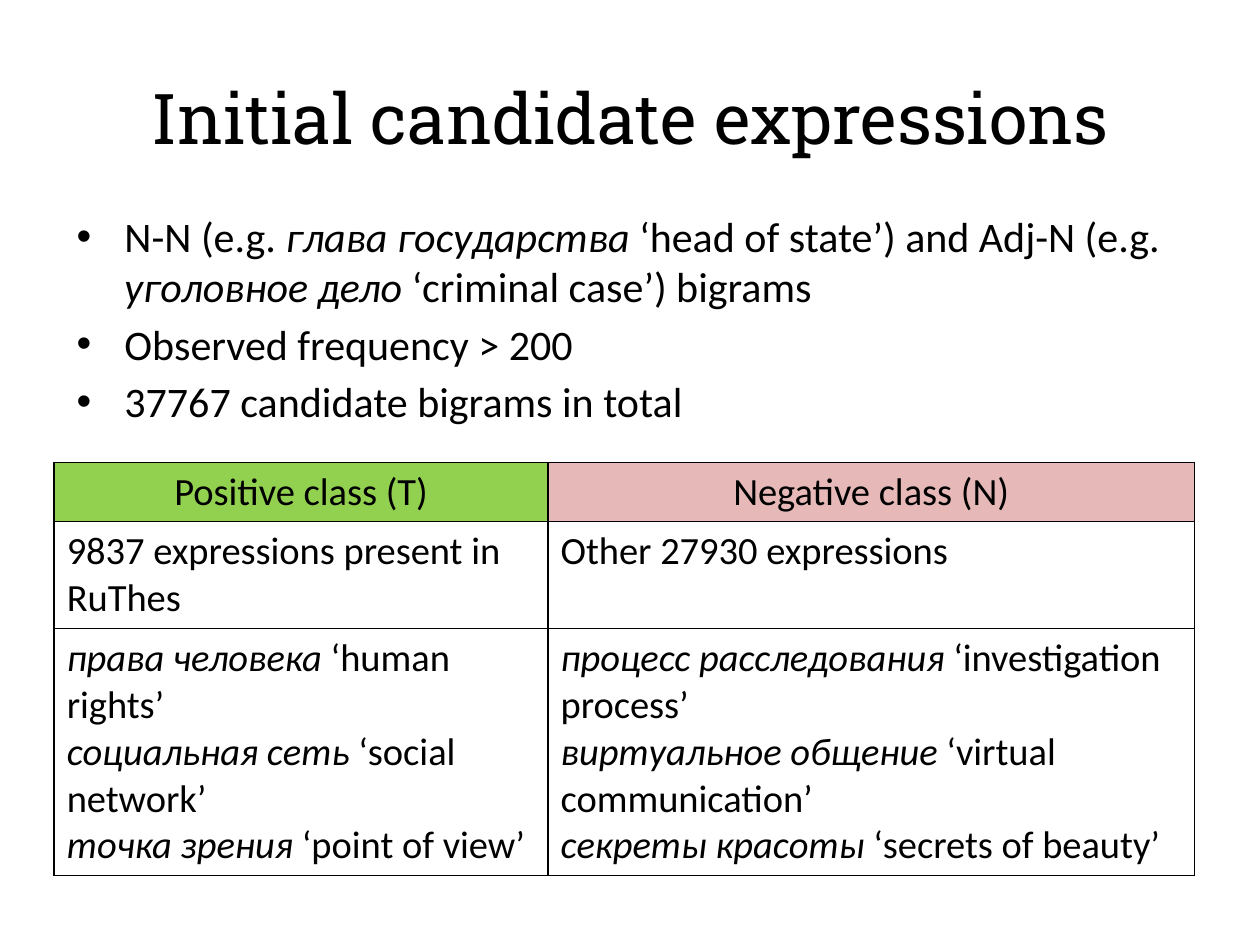
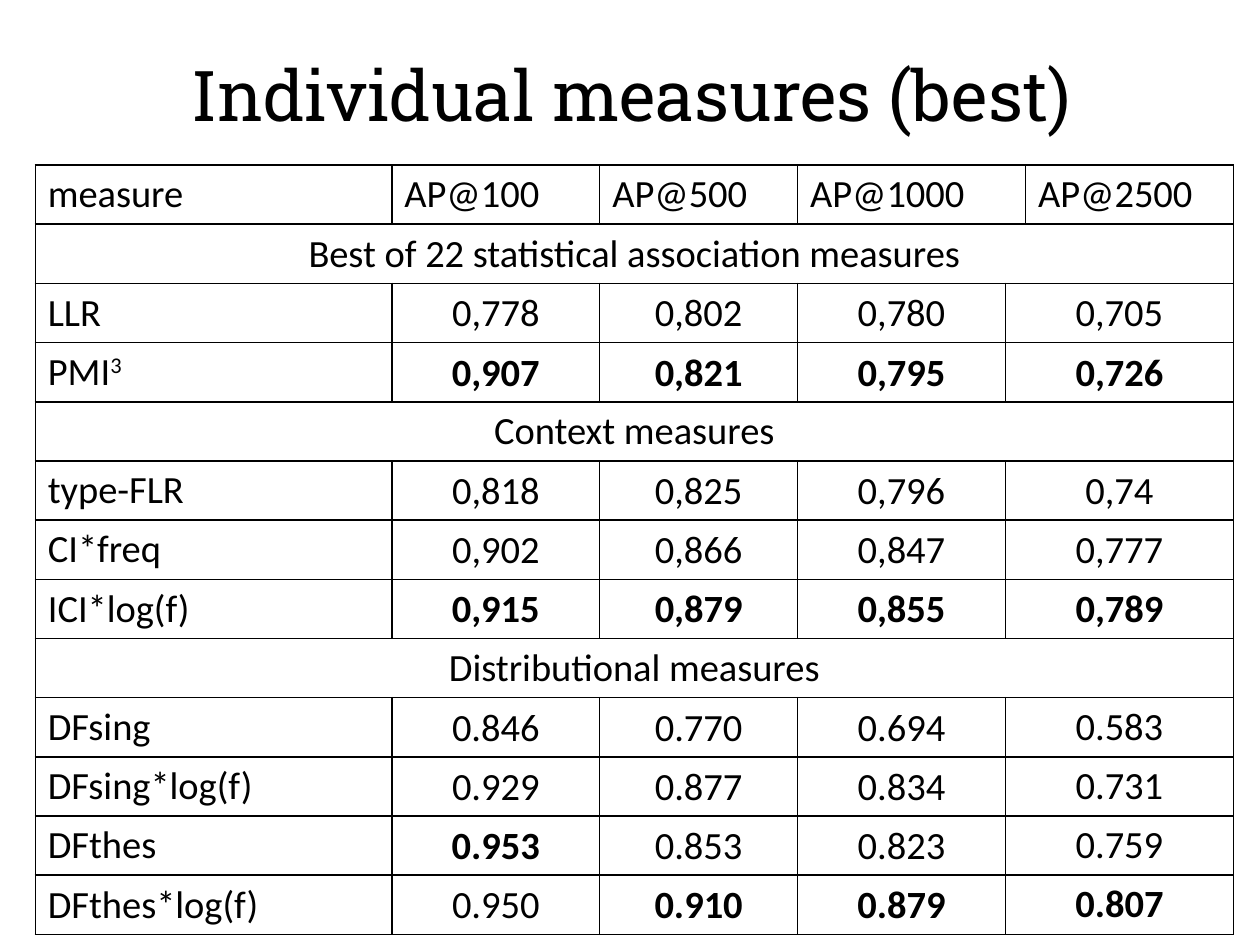
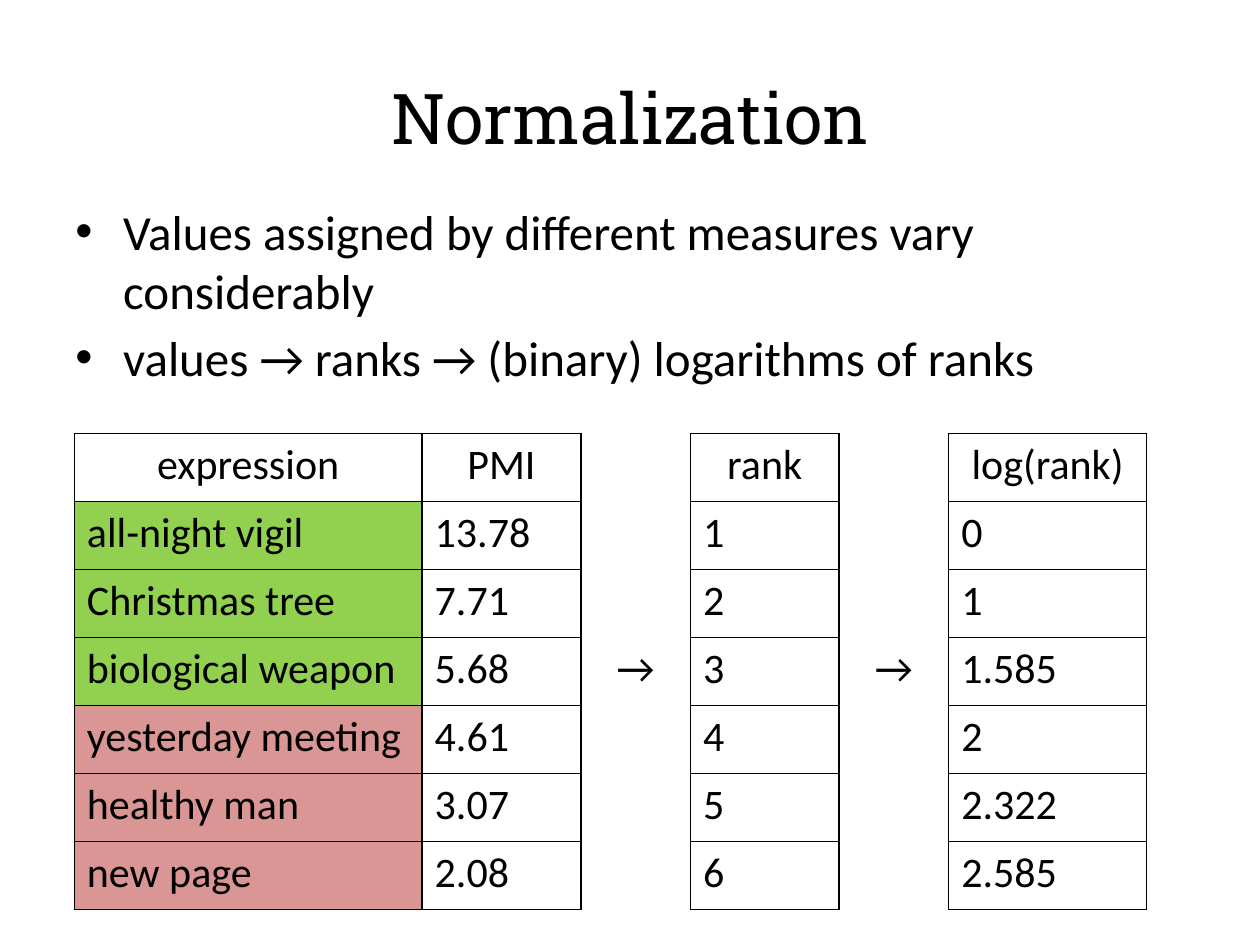
from lxml.etree import SubElement
from pptx import Presentation
from pptx.dml.color import RGBColor
from pptx.enum.text import MSO_ANCHOR, PP_ALIGN
from pptx.oxml import parse_xml
from pptx.oxml.ns import nsdecls, qn
from pptx.util import Inches, Pt

COLORS = {"ink": "000000", "green": "92D050", "pink": "E6B9B8", "rose": "D99694"}
HEAD, BODY = "Roboto Slab", "Calibri"
MID = PP_ALIGN.CENTER
TIGHT = {"margin_left": Inches(0.07), "margin_right": Inches(0.07),
         "margin_top": 0, "margin_bottom": 0}

CLASSES = [
    ["Positive class (T)", "Negative class (N)"],
    ["9837 expressions present in RuThes", "Other 27930 expressions"],
    ["|_права человека| ‘human rights’\n|_социальная сеть |‘social network’\n"
     "|_точка зрения |‘point of view’",
     "|_процесс расследования |‘investigation process’\n"
     "|_виртуальное общение |‘virtual communication’\n"
     "|_секреты красоты |‘secrets of beauty’"],
]
SCORES = {
    "Best of 22 statistical association measures": [
        ["LLR", "0,778", "0,802", "0,780", "0,705"],
        ["PMI|^3", "0,907", "0,821", "0,795", "0,726"]],
    "Context measures": [
        ["type-FLR", "0,818", "0,825", "0,796", "0,74"],
        ["CI*freq", "0,902", "0,866", "0,847", "0,777"],
        ["ICI*log(f)", "0,915", "0,879", "0,855", "0,789"]],
    "Distributional measures": [
        ["DFsing", "0.846", "0.770", "0.694", "0.583"],
        ["DFsing*log(f)", "0.929", "0.877", "0.834", "0.731"],
        ["DFthes", "0.953", "0.853", "0.823", "0.759"],
        ["DFthes*log(f)", "0.950", "0.910", "0.879", "0.807"]],
}
RANKS = [
    ["expression", "PMI", "", "rank", "", "log(rank)"],
    ["all-night vigil", "13.78", "", "1", "", "0"],
    ["Christmas tree", "7.71", "", "2", "", "1"],
    ["biological weapon", "5.68", "→", "3", "→", "1.585"],
    ["yesterday meeting", "4.61", "", "4", "", "2"],
    ["healthy man", "3.07", "", "5", "", "2.322"],
    ["new page", "2.08", "", "6", "", "2.585"],
]


def apply(obj, form):
    """Set each attribute named in a dict of format values."""
    for key, val in form.items():
        setattr(obj, key, val)


def write(frame, text, size, face=BODY, bold=False, **form):
    """Write lines of text; a part after | may start with _ (italic) or ^ (raised)."""
    for num, line in enumerate(text.split("\n")):
        para = frame.add_paragraph() if num else frame.paragraphs[0]
        apply(para, form)
        for part in filter(None, line.split("|")):
            run = para.add_run()
            run.text = part.lstrip("_^")
            apply(run.font, {"name": face, "size": Pt(size), "bold": bold,
                             "italic": part.startswith("_")})
            run.font.color.rgb = RGBColor.from_string(COLORS["ink"])
            if part.startswith("^"):
                run.font._element.set("baseline", "30000")


def add_box(slide, at, **form):
    """Add a wrapping text box and return its frame."""
    frame = slide.shapes.add_textbox(*map(Inches, at)).text_frame
    apply(frame, {"word_wrap": True, **form})
    return frame


def add_title(slide, text, at=(0.5, 0.3, 9, 1.25)):
    """Add the centred slide title."""
    frame = add_box(slide, at, vertical_anchor=MSO_ANCHOR.MIDDLE)
    write(frame, text, 40, HEAD, alignment=MID)


def add_list(slide, at, text, size):
    """Add a bulleted list with one item a line."""
    frame = add_box(slide, at)
    write(frame, text, size, space_before=Pt(size / 6))
    for para in frame.paragraphs:
        props = para._p.get_or_add_pPr()
        props.set("marL", str(Inches(0.38)))
        props.set("indent", str(Inches(-0.38)))
        SubElement(props, qn("a:buFont"), typeface="Arial")
        SubElement(props, qn("a:buChar"), char="•")


def add_lines(cell, sides):
    """Draw the given sides of a cell and clear the others."""
    props = cell._tc.get_or_add_tcPr()
    for num, side in enumerate("LRTB"):
        paint = (f'<a:solidFill><a:srgbClr val="{COLORS["ink"]}"/></a:solidFill>'
                 if side in sides else "<a:noFill/>")
        props.insert(num, parse_xml(
            f'<a:ln{side} {nsdecls("a")} w="{Pt(1)}">{paint}</a:ln{side}>'))


def paint(cell, color):
    """Fill a cell with a named colour."""
    cell.fill.solid()
    cell.fill.fore_color.rgb = RGBColor.from_string(COLORS[color])


def add_grid(slide, left, top, cols, rows, gaps=()):
    """Add a plain ruled table; columns in gaps have side lines only."""
    wide, high = Inches(sum(cols)), Inches(sum(rows))
    grid = slide.shapes.add_table(len(rows), len(cols), Inches(left), Inches(top),
                                  wide, high).table
    apply(grid, {"first_row": False, "horz_banding": False})
    for col, size in zip(grid.columns, cols):
        col.width = Inches(size)
    for row, size in zip(grid.rows, rows):
        row.height = Inches(size)
        for num, cell in enumerate(row.cells):
            cell.fill.background()
            add_lines(cell, "LR" if num in gaps else "LRTB")
    return grid


def show_classes(slide):
    """Build the slide on candidate expressions."""
    add_title(slide, "Initial candidate expressions")
    add_list(slide, (0.51, 1.62, 9, 2.39),
             "N-N (e.g. |_глава государства| ‘head of state’) and Adj-N (e.g. "
             "|_уголовное дело |‘criminal case’) bigrams\n"
             "Observed frequency > 200\n37767 candidate bigrams in total", 24)
    grid = add_grid(slide, 0.43, 3.67, [3.92, 5.13], [0.47, 0.85, 1.96])
    for y, row in enumerate(CLASSES):
        for x, text in enumerate(row):
            write(grid.cell(y, x).text_frame, text, 22,
                  alignment=None if y else MID)
    for x, color in enumerate(["green", "pink"]):
        paint(grid.cell(0, x), color)


def show_scores(slide):
    """Build the slide of scores, with the best of each group in bold."""
    add_title(slide, "Individual measures (best)", (0.51, 0.21, 9, 1.07))
    count = 1 + sum(1 + len(rows) for rows in SCORES.values())
    grid = add_grid(slide, 0.28, 1.31, [2.83, 1.65, 1.57, 1.65, 0.16, 1.65],
                    [0.47] * count)
    grid.cell(0, 3).merge(grid.cell(0, 4))
    heads = ["measure", "AP@100", "AP@500", "AP@1000", "AP@2500"]
    for x, text in zip([0, 1, 2, 3, 5], heads):
        write(grid.cell(0, x).text_frame, text, 22)
    y = 1
    for group, rows in SCORES.items():
        grid.cell(y, 0).merge(grid.cell(y, 5))
        write(grid.cell(y, 0).text_frame, group, 22, alignment=MID)
        best = [max(col) for col in zip(*rows)]
        for y, (name, *vals) in enumerate(rows, y + 1):
            write(grid.cell(y, 0).text_frame, name, 22)
            grid.cell(y, 4).merge(grid.cell(y, 5))
            for x, val in enumerate(vals, 1):
                cell = grid.cell(y, x)
                apply(cell, TIGHT)
                form = {"line_spacing": 1.15}
                if x == 4 and group.startswith("Dist"):
                    cell.vertical_anchor = MSO_ANCHOR.MIDDLE
                    form = {}
                write(cell.text_frame, val, 22, bold=val == best[x],
                      alignment=MID, **form)
        y += 1


def show_ranks(slide):
    """Build the slide on turning values into ranks."""
    add_title(slide, "Normalization")
    add_list(slide, (0.5, 1.55, 9, 1.75),
             "Values assigned by different measures vary considerably\n"
             "values → ranks → (binary) logarithms of ranks", 28)
    gaps = (2, 4)
    grid = add_grid(slide, 0.59, 3.44, [2.76, 1.26, 0.87, 1.18, 0.87, 1.57],
                    [0.54] * len(RANKS), gaps)
    for y, row in enumerate(RANKS):
        for x, text in enumerate(row):
            write(grid.cell(y, x).text_frame, text, 24,
                  alignment=MID if y == 0 or x in gaps else None)
        if y:
            paint(grid.cell(y, 0), "green" if y <= 3 else "rose")


def main():
    """Build and save the deck."""
    deck = Presentation()
    apply(deck, {"slide_width": Inches(10), "slide_height": Inches(7.5)})
    for show in (show_classes, show_scores, show_ranks):
        show(deck.slides.add_slide(deck.slide_layouts[6]))
    deck.save("out.pptx")


if __name__ == "__main__":
    main()
